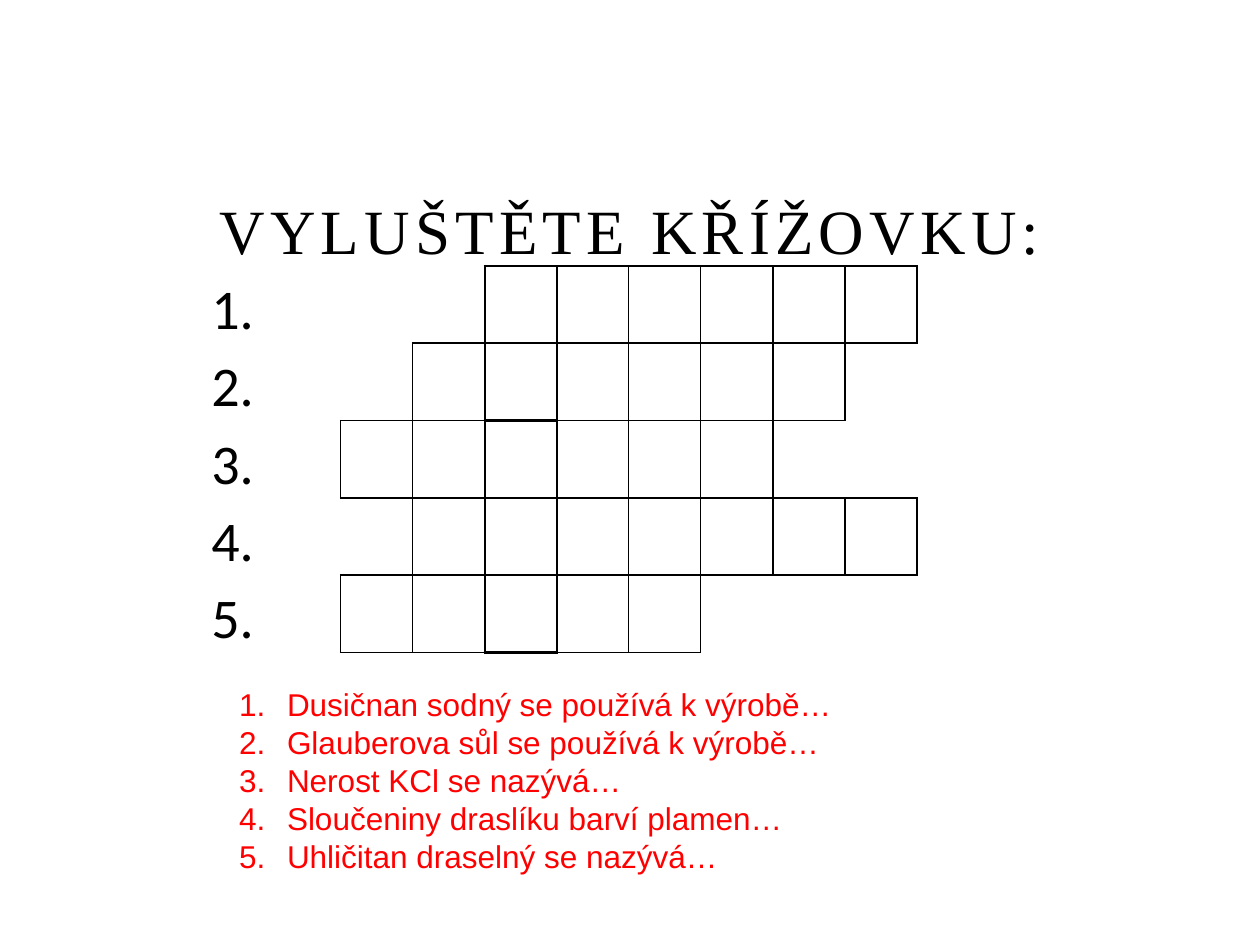
from lxml.etree import SubElement
from pptx import Presentation
from pptx.dml.color import RGBColor
from pptx.enum.text import MSO_ANCHOR, PP_ALIGN
from pptx.oxml.ns import qn
from pptx.util import Inches, Pt

COLORS = {"ink": "000000", "clue": "FF0000"}
COLUMNS = 10
KEY_COLUMN = 4
# First and last column of each answer
ANSWERS = [(4, 9), (3, 8), (2, 7), (3, 9), (2, 6)]
CLUES = [
    "Dusičnan sodný se používá k výrobě…",
    "Glauberova sůl se používá k výrobě…",
    "Nerost KCl se nazývá…",
    "Sloučeniny draslíku barví plamen…",
    "Uhličitan draselný se nazývá…",
]


def style(font, name, size, color):
    font.name = name
    font.size = Pt(size)
    font.color.rgb = RGBColor.from_string(COLORS[color])


def line_width(row, column):
    """Border width that a square asks for, 0 outside the answers."""
    if not 0 <= row < len(ANSWERS):
        return 0
    first, last = ANSWERS[row]
    if not first <= column <= last:
        return 0
    return 1.5 if column == KEY_COLUMN else 1


prs = Presentation()
prs.slide_width, prs.slide_height = Inches(10), Inches(7.5)
slide = prs.slides.add_slide(prs.slide_layouts[6])

# Title
title = slide.shapes.add_textbox(Inches(1.5), Inches(1.42), Inches(7), Inches(0.75)).text_frame
title.word_wrap = True
title.vertical_anchor = MSO_ANCHOR.BOTTOM
title.text = "VYLUŠTĚTE KŘÍŽOVKU:"
heading = title.paragraphs[0]
heading.alignment = PP_ALIGN.CENTER
style(heading.runs[0].font, "Times New Roman", 36, "ink")
heading.runs[0].font._element.set("spc", "300")

# Crossword grid
crossword = slide.shapes.add_table(
    len(ANSWERS), COLUMNS, Inches(1.56), Inches(2.11), Inches(5.72), Inches(3.07)
).table
crossword.first_row = False
crossword.horz_banding = False

for row in range(len(ANSWERS)):
    for column in range(COLUMNS):
        square = crossword.cell(row, column)
        properties = square._tc.get_or_add_tcPr()
        neighbours = {
            "a:lnL": (row, column - 1),
            "a:lnR": (row, column + 1),
            "a:lnT": (row - 1, column),
            "a:lnB": (row + 1, column),
        }
        # A shared edge takes the wider of the two squares' borders
        for side, neighbour in neighbours.items():
            width = max(line_width(row, column), line_width(*neighbour))
            border = SubElement(properties, qn(side), w=str(Pt(width)))
            if width:
                fill = SubElement(border, qn("a:solidFill"))
                SubElement(fill, qn("a:srgbClr"), val=COLORS["ink"])
            else:
                SubElement(border, qn("a:noFill"))
        square.fill.background()

    # Row number
    number = crossword.cell(row, 0)
    number.margin_left = number.margin_right = Inches(0.07)
    number.margin_top = number.margin_bottom = 0
    number.text_frame.text = f"{row + 1}."
    label = number.text_frame.paragraphs[0]
    label.alignment = PP_ALIGN.CENTER
    label.line_spacing = 1.15
    style(label.runs[0].font, "Calibri", 32, "ink")

# Numbered clues
clues = slide.shapes.add_textbox(Inches(1.8), Inches(5.39), Inches(4.9), Inches(1.6)).text_frame
clues.word_wrap = False
clues.text = "\n".join(CLUES)
for clue in clues.paragraphs:
    indent = clue._p.get_or_add_pPr()
    indent.set("marL", str(Inches(0.38)))
    indent.set("indent", str(-Inches(0.38)))
    SubElement(indent, qn("a:buFont"), typeface="+mj-lt")
    SubElement(indent, qn("a:buAutoNum"), type="arabicPeriod")
    style(clue.runs[0].font, "Arial", 18, "clue")

prs.save("out.pptx")
